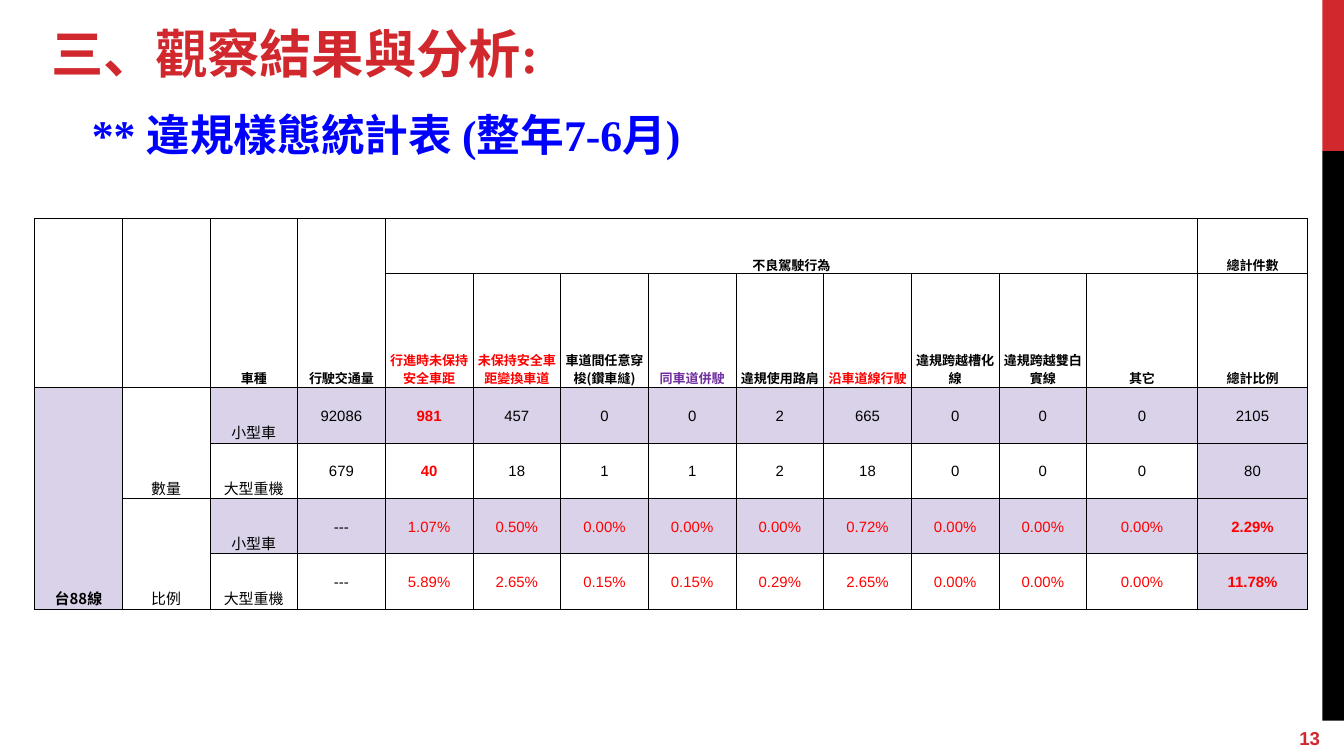
from lxml.etree import SubElement
from pptx import Presentation
from pptx.dml.color import RGBColor
from pptx.enum.shapes import MSO_SHAPE as Shape
from pptx.enum.text import MSO_ANCHOR as Anchor, PP_ALIGN as Align
from pptx.oxml.ns import qn
from pptx.util import Pt

PX = 2286
WIDTH, HEIGHT = 4000, 2250
CJK, SERIF, SANS = "Noto Sans CJK TC", "Times New Roman", "Arial"
RED, BLACK, WHITE, BLUE = "D1282E", "000000", "FFFFFF", "0000FF"
ALERT, PURPLE, LILAC = "FF0000", "7030A0", "D9D2E9"
COLUMNS = [261] * 12 + [329] * 2
ROWS = [165, 339] + [165] * 4

BEHAVIOURS = [
    ("行進時未保持安全車距", ALERT), ("未保持安全車距變換車道", ALERT),
    ("車道間任意穿梭(鑽車縫)", BLACK), ("同車道併駛", PURPLE),
    ("違規使用路肩", BLACK), ("沿車道線行駛", ALERT),
    ("違規跨越槽化線", BLACK), ("違規跨越雙白實線", BLACK),
    ("其它", BLACK), ("總計比例", BLACK),
]
HEADINGS = [(0, 2, "車種"), (0, 3, "行駛交通量"), (0, 4, "不良駕駛行為"), (0, 13, "總計件數")]
GROUPS = [(2, 1, "數量"), (4, 1, "比例")]
RECORDS = [
    "小型車 92086 981 457 0 0 2 665 0 0 0 2105",
    "大型重機 679 40 18 1 1 2 18 0 0 0 80",
    "小型車 --- 1.07% 0.50% 0.00% 0.00% 0.00% 0.72% 0.00% 0.00% 0.00% 2.29%",
    "大型重機 --- 5.89% 2.65% 0.15% 0.15% 0.29% 2.65% 0.00% 0.00% 0.00% 11.78%",
]
MERGES = [(0, column, 1, column) for column in range(4)] + [
    (0, 4, 0, 12), (2, 0, 5, 0), (2, 1, 3, 1), (4, 1, 5, 1)]


def color(code):
    """Turn a hex string into a colour."""
    return RGBColor.from_string(code)


def emu(box):
    """Turn px lengths into EMU."""
    return [length * PX for length in box]


def apply(target, values):
    """Set each attribute in values on the target."""
    for name, value in values.items():
        setattr(target, name, value)


def write(frame, words, size, font, ink, bold=True, margins=(40, 40, 40, 40),
          anchor=Anchor.TOP, **paragraph_format):
    """Fill a text frame with one formatted paragraph."""
    sides = ("margin_left", "margin_top", "margin_right", "margin_bottom")
    apply(frame, dict(zip(sides, emu(margins)), word_wrap=True, vertical_anchor=anchor))
    paragraph = frame.paragraphs[0]
    apply(paragraph, {"alignment": Align.LEFT, **paragraph_format})
    run = paragraph.add_run()
    run.text = words
    apply(run.font, {"size": Pt(size), "name": font, "bold": bold})
    run.font.color.rgb = color(ink)
    SubElement(run.font._element, qn("a:ea")).set("typeface", CJK)
    return paragraph


def add_block(slide, box, fill):
    """Add a plain filled rectangle."""
    block = slide.shapes.add_shape(Shape.RECTANGLE, *emu(box))
    block.shadow.inherit = False
    block.fill.solid()
    block.fill.fore_color.rgb = color(fill)
    block.line.fill.background()
    return block


def add_side_band(slide, box):
    """Add the two-colour band with the page number below it."""
    left, top, width, height = box
    red_height = height // 5
    add_block(slide, (left, top, width, red_height), RED)
    add_block(slide, (left, top + red_height, width, height - red_height), BLACK)
    page = add_block(slide, (left + width - 172, top + height - 105, 172, 105), WHITE)
    write(page.text_frame, "13", 10, SANS, RED, anchor=Anchor.MIDDLE)


def add_headings(slide, box):
    """Place the title and the subtitle under it."""
    left, top, width, height = box
    title = slide.shapes.title
    apply(title, dict(zip(("left", "top", "width", "height"), emu((left + 8, top, width - 8, height)))))
    write(title.text_frame, "三、觀察結果與分析:", 28, SERIF, RED, line_spacing=0.9)
    subtitle = slide.shapes.add_textbox(*emu((left, top + 256, width, height)))
    line = write(subtitle.text_frame, "** 違規樣態統計表 (整年7-6月)", 23.4, SERIF, BLUE,
                 line_spacing=0.9)
    line._p.get_or_add_pPr().set("marL", str(130 * PX))


def style_cell(cell, fill):
    """Give a cell thin black borders and its fill."""
    apply(cell, dict(zip(("margin_left", "margin_top", "margin_right", "margin_bottom"),
                         emu((4, 4, 4, 0)))))
    properties = cell._tc.get_or_add_tcPr()
    for side in ("lnL", "lnR", "lnT", "lnB"):
        border = SubElement(properties, qn(f"a:{side}"), w=str(Pt(0.5)))
        SubElement(SubElement(border, qn("a:solidFill")), qn("a:srgbClr"), val=BLACK)
    if fill:
        cell.fill.solid()
        cell.fill.fore_color.rgb = color(fill)
    else:
        cell.fill.background()


def is_shaded(row, column):
    """Tell whether a cell has the lilac fill."""
    return row > 1 and (column in (0, 13) or column > 1 and row % 2 == 0)


def write_cell(table, row, column, words, size=8, font=CJK, ink=BLACK, bold=False,
               anchor=Anchor.BOTTOM):
    """Write centred words in a table cell."""
    cell = table.cell(row, column)
    cell.vertical_anchor = anchor
    write(cell.text_frame, words, size, font, ink, bold, (0, 0, 0, 0), anchor,
          alignment=Align.CENTER)
    cell._tc.txBody.bodyPr.attrib.clear()


def add_statistics(slide, box):
    """Build the table of violations by vehicle type."""
    table = slide.shapes.add_table(len(ROWS), len(COLUMNS), *emu(box)).table
    apply(table, {"first_row": False, "horz_banding": False})
    for column, width in zip(table.columns, COLUMNS):
        column.width = width * PX
    for row, height in zip(table.rows, ROWS):
        row.height = height * PX
    for row in range(len(ROWS)):
        for column in range(len(COLUMNS)):
            style_cell(table.cell(row, column), LILAC if is_shaded(row, column) else None)
    for top, left, bottom, right in MERGES:
        table.cell(top, left).merge(table.cell(bottom, right))

    for row, column, words in HEADINGS:
        write_cell(table, row, column, words, size=7, bold=True)
    for column, (words, ink) in enumerate(BEHAVIOURS, 4):
        write_cell(table, 1, column, words, size=7, ink=ink, bold=True)
    write_cell(table, 2, 0, "台88線", bold=True)
    for row, column, words in GROUPS:
        write_cell(table, row, column, words)
    for row, record in enumerate(RECORDS, 2):
        vehicle, *figures = record.split()
        write_cell(table, row, 2, vehicle)
        for column, figure in enumerate(figures, 3):
            is_rate = "%" in figure
            is_worst = row < 4 and column == 4
            write_cell(table, row, column, figure, font=SANS, anchor=Anchor.MIDDLE,
                       ink=ALERT if is_rate or is_worst else BLACK,
                       bold=is_worst or is_rate and column == 13)


def main():
    """Build and save the slide."""
    deck = Presentation()
    apply(deck, {"slide_width": WIDTH * PX, "slide_height": HEIGHT * PX})
    slide = deck.slides.add_slide(deck.slide_layouts[5])
    add_side_band(slide, (3936, 0, 64, HEIGHT))
    add_headings(slide, (104, 44, 3728, 252))
    add_statistics(slide, (103, 650, sum(COLUMNS), sum(ROWS)))
    deck.save("out.pptx")


if __name__ == "__main__":
    main()
